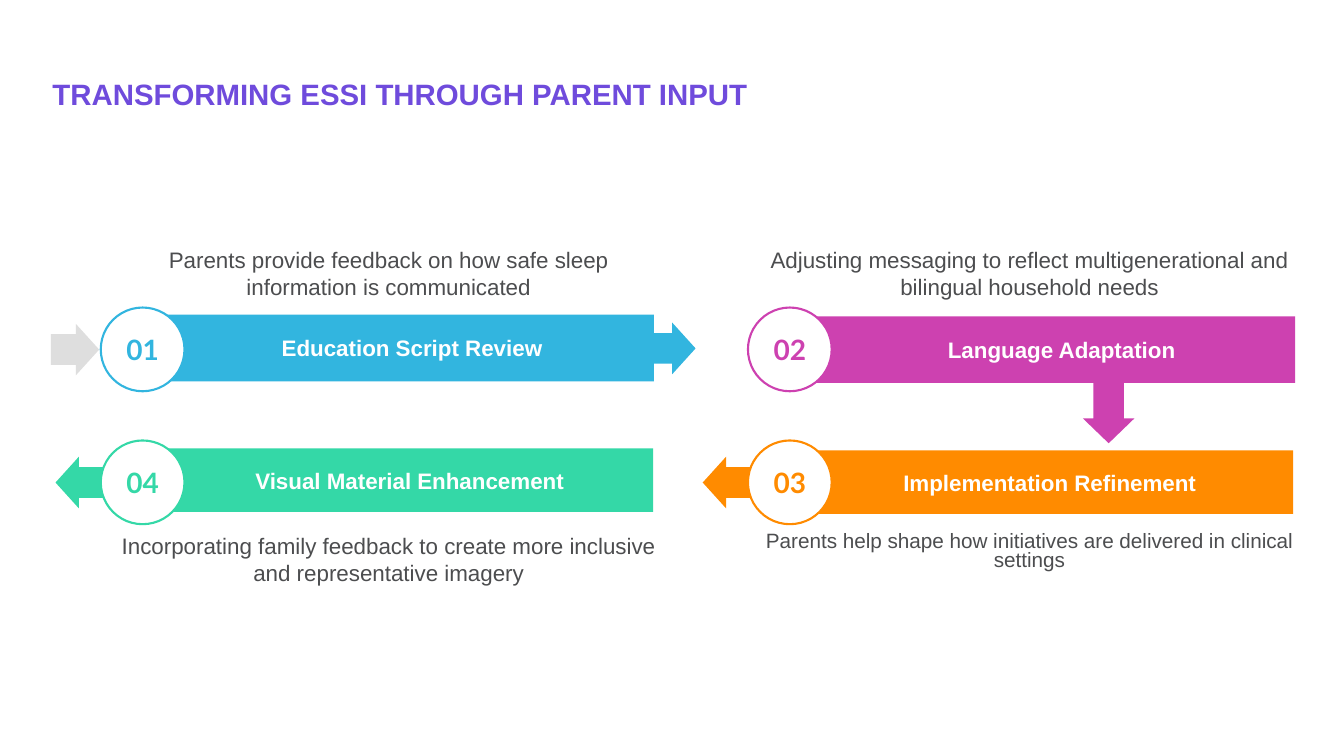
from pptx import Presentation
from pptx.dml.color import RGBColor
from pptx.enum.shapes import MSO_SHAPE
from pptx.enum.text import MSO_ANCHOR, MSO_AUTO_SIZE, PP_ALIGN
from pptx.util import Cm, Pt

COLORS = {
    "blue": "32B5DF", "magenta": "CD41B0", "orange": "FF8B00", "green": "34D8A7",
    "grey": "DEDEDE", "white": "FFFFFF", "body": "4C4D4F", "title": "6F4BDC",
}
BADGE_SIZE = 2.11
CAPTION_HEIGHT = 1.07
ARROW_ACROSS = (1.22, 1.3)
ARROW_DOWN = (1.3, 1.88)
LEFT_COLUMN, RIGHT_COLUMN = 2.54, 18.85
TOP_ROW, BOTTOM_ROW = 7.75, 11.1

# Offsets in cm are measured from the top left corner of the step's badge.
# bar: x, y, width, height; label_inset: left inset that shifts the bar label
STEPS = [
    dict(number="01", color="blue", origin=(LEFT_COLUMN, TOP_ROW),
         label="Education Script Review", bar=(1.6, 0.18, 12.34, 1.68), label_inset=0.28,
         arrow=(MSO_SHAPE.RIGHT_ARROW, 13.77, 0.38, *ARROW_ACROSS),
         caption="Parents provide feedback on how safe sleep information is communicated",
         caption_at=(0.46, -1.27)),
    dict(number="02", color="magenta", origin=(RIGHT_COLUMN, TOP_ROW),
         label="Language Adaptation", bar=(1.45, 0.22, 12.34, 1.68), label_inset=0.7,
         arrow=(MSO_SHAPE.DOWN_ARROW, 8.44, 1.54, *ARROW_DOWN),
         caption="Adjusting messaging to reflect multigenerational and bilingual household needs",
         caption_at=(0.3, -1.27)),
    dict(number="03", color="orange", origin=(RIGHT_COLUMN, BOTTOM_ROW),
         label="Implementation Refinement", bar=(1.47, 0.25, 12.27, 1.6),
         arrow=(MSO_SHAPE.LEFT_ARROW, -1.14, 0.41, *ARROW_ACROSS),
         caption="Parents help shape how initiatives are delivered in clinical settings",
         caption_at=(0.3, 2.31), caption_format=dict(size=14.8, line_spacing=0.8)),
    dict(number="04", color="green", origin=(LEFT_COLUMN, BOTTOM_ROW),
         label="Visual Material Enhancement", bar=(1.65, 0.2, 12.27, 1.6),
         arrow=(MSO_SHAPE.LEFT_ARROW, -1.14, 0.41, *ARROW_ACROSS),
         caption="Incorporating family feedback to create more inclusive and representative imagery",
         caption_at=(0.46, 2.31)),
]


def rgb(color):
    return RGBColor.from_string(COLORS[color])


def write(holder, text, size=16, color="body", bold=False, font="Arial",
          align=PP_ALIGN.CENTER, anchor=MSO_ANCHOR.MIDDLE, insets=(0, 0, 0, 0),
          wrap=True, line_spacing=None):
    frame = holder.text_frame
    frame.auto_size = MSO_AUTO_SIZE.NONE
    frame.word_wrap = wrap
    frame.vertical_anchor = anchor
    (frame.margin_left, frame.margin_top,
     frame.margin_right, frame.margin_bottom) = map(Cm, insets)
    paragraph = frame.paragraphs[0]
    paragraph.alignment = align
    paragraph.line_spacing = line_spacing
    run = paragraph.add_run()
    run.text = text
    run.font.name, run.font.size, run.font.bold = font, Pt(size), bold
    run.font.color.rgb = rgb(color)


def add_filled(slide, kind, x, y, width, height, fill, outline=None):
    shape = slide.shapes.add_shape(kind, Cm(x), Cm(y), Cm(width), Cm(height))
    shape.shadow.inherit = False
    shape.fill.solid()
    shape.fill.fore_color.rgb = rgb(fill)
    if outline:
        shape.line.color.rgb = rgb(outline)
        shape.line.width = Pt(1.5)
    else:
        shape.line.fill.background()
    return shape


def add_arrow(slide, kind, x, y, width, height, color):
    arrow = add_filled(slide, kind, x, y, width, height, color)
    arrow.adjustments[0], arrow.adjustments[1] = 0.595, 0.482


def add_title(slide, x, y, width, height):
    title = slide.shapes.title
    title.left, title.top, title.width, title.height = map(Cm, (x, y, width, height))
    write(title, "TRANSFORMING ESSI THROUGH PARENT INPUT", size=21, color="title",
          bold=True, align=PP_ALIGN.LEFT, anchor=MSO_ANCHOR.BOTTOM,
          insets=(0.25, 0.13, 0.25, 0.13))


def add_step(slide, number, color, origin, label, bar, arrow, caption, caption_at,
             label_inset=0.13, caption_format=None):
    x, y = origin

    # Arrow to the next step
    kind, arrow_x, arrow_y, *arrow_size = arrow
    add_arrow(slide, kind, x + arrow_x, y + arrow_y, *arrow_size, color)

    # Labelled bar
    bar_x, bar_y, *bar_size = bar
    label_bar = add_filled(slide, MSO_SHAPE.RECTANGLE, x + bar_x, y + bar_y, *bar_size, color)
    write(label_bar, label, color="white", bold=True,
          insets=(label_inset, 0.13, 0.13, 0.13))

    # Number badge
    badge = add_filled(slide, MSO_SHAPE.OVAL, x, y, BADGE_SIZE, BADGE_SIZE, "white", color)
    write(badge, number, size=20, color=color, bold=True, font="Lato", wrap=False)

    # Caption, growing away from the bar
    caption_x, caption_y = caption_at
    caption_box = slide.shapes.add_textbox(
        Cm(x + caption_x), Cm(y + caption_y), Cm(13.59), Cm(CAPTION_HEIGHT))
    anchor = MSO_ANCHOR.BOTTOM if caption_y < 0 else MSO_ANCHOR.TOP
    write(caption_box, caption, anchor=anchor, **(caption_format or {}))


def main():
    deck = Presentation()
    deck.slide_width, deck.slide_height = Cm(33.87), Cm(19.05)
    slide = deck.slides.add_slide(deck.slide_layouts[5])
    add_title(slide, 1.07, 0.81, 31.67, 2.13)
    # Entry arrow into the first step
    add_arrow(slide, MSO_SHAPE.RIGHT_ARROW, LEFT_COLUMN - 1.26, TOP_ROW + 0.41,
              *ARROW_ACROSS, "grey")
    for step in STEPS:
        add_step(slide, **step)
    deck.save("out.pptx")


if __name__ == "__main__":
    main()
